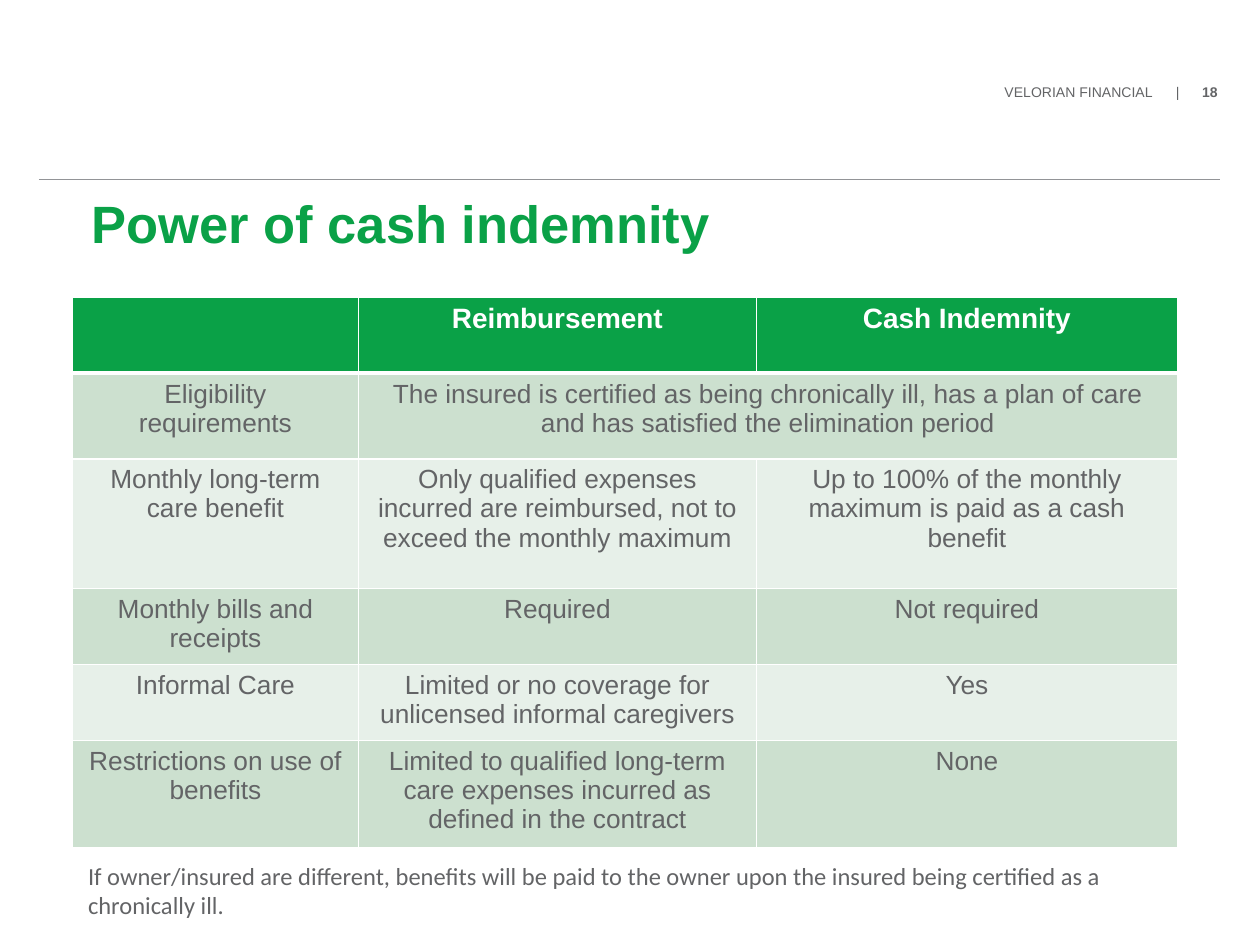
"""Build the slide comparing reimbursement with cash indemnity."""
import pptx
import pptx.dml.color
import pptx.enum.shapes
import pptx.enum.text
import pptx.oxml
import pptx.oxml.ns
import pptx.util
from lxml import etree

Pt = pptx.util.Pt
GREEN, GRAY, WHITE = "0AA147", "636466", "FFFFFF"
BANDS = ["CCE0CF", "E7F0E9"]
NS = pptx.oxml.ns.nsdecls("a")


def color(value):
    return pptx.dml.color.RGBColor.from_string(value)


def add_run(p, text, size, value, bold=False, name="Arial"):
    r = p.add_run()
    r.text = text
    r.font.name = name
    r.font.size = Pt(size)
    r.font.bold = bold
    r.font.color.rgb = color(value)


prs = pptx.Presentation()
prs.slide_width, prs.slide_height = Pt(720), Pt(540)
s = prs.slides.add_slide(prs.slide_layouts[6])

rule = s.shapes.add_connector(
    pptx.enum.shapes.MSO_CONNECTOR.STRAIGHT, Pt(22.3), Pt(102.3), Pt(697), Pt(102.3))
rule.line.color.rgb = color("929497")
rule.line.width = Pt(0.5)
etree.SubElement(rule._element.spPr, pptx.oxml.ns.qn("a:effectLst"))

sp = s.shapes.add_textbox(Pt(574), Pt(46), Pt(125.5), Pt(11))
tf = sp.text_frame
tf.word_wrap = True
tf.margin_left = tf.margin_right = tf.margin_bottom = 0
tf.margin_top = Pt(1.7)
p = tf.paragraphs[0]
p._p.get_or_add_pPr().append(pptx.oxml.parse_xml(
    f'<a:tabLst {NS}><a:tab pos="{Pt(98)}" algn="l"/>'
    f'<a:tab pos="{Pt(113)}" algn="l"/></a:tabLst>'))
add_run(p, "VELORIAN FINANCIAL\t|\t", 8, GRAY)
add_run(p, "18", 8, GRAY, True)

sp = s.shapes.add_textbox(Pt(45.4), Pt(110.9), Pt(471), Pt(75))
tf = sp.text_frame
tf.word_wrap = True
p = tf.paragraphs[0]
p.line_spacing = Pt(31)
add_run(p, "Power of cash indemnity", 30, GREEN, True)

rows = [
    ["", "Reimbursement", "Cash Indemnity"],
    ["Eligibility requirements",
     "The insured is certified as being chronically ill, has a plan of care "
     "and has satisfied the elimination period", ""],
    ["Monthly long-term care benefit",
     "Only qualified expenses incurred are reimbursed, not to exceed the monthly maximum",
     "Up to 100% of the monthly maximum is paid as a cash benefit"],
    ["Monthly bills and receipts", "Required", "Not required"],
    ["Informal Care", "Limited or no coverage for unlicensed informal caregivers", "Yes"],
    ["Restrictions on use of benefits",
     "Limited to qualified long-term care expenses incurred as defined in the contract",
     "None"],
]
widths = [163.4, 227.5, 240.5]
heights = [43.2, 49, 74.2, 43.4, 43.4, 57]
table = s.shapes.add_table(
    len(rows), len(widths), Pt(41.4), Pt(170), Pt(sum(widths)), Pt(sum(heights))).table
for column, width in zip(table.columns, widths):
    column.width = Pt(width)
for row, height in zip(table.rows, heights):
    row.height = Pt(height)

for i, texts in enumerate(rows):
    header = i == 0
    for j, text in enumerate(texts):
        cell = table.cell(i, j)
        tcPr = cell._tc.get_or_add_tcPr()
        for side in "LRTB":
            thick = (header and side == "B") or (i == 1 and side == "T")
            tcPr.append(pptx.oxml.parse_xml(
                f'<a:ln{side} {NS} w="{Pt(3 if thick else 1)}"><a:solidFill>'
                f'<a:srgbClr val="{WHITE}"/></a:solidFill></a:ln{side}>'))
        cell.fill.solid()
        cell.fill.fore_color.rgb = color(GREEN if header else BANDS[(i - 1) % 2])
        if text:
            p = cell.text_frame.paragraphs[0]
            p.alignment = pptx.enum.text.PP_ALIGN.CENTER
            add_run(p, text, 16 if header else 15, WHITE if header else GRAY, header)
table.cell(1, 1).merge(table.cell(1, 2))

sp = s.shapes.add_textbox(Pt(43.2), Pt(488.2), Pt(627), Pt(41))
tf = sp.text_frame
tf.word_wrap = True
add_run(tf.paragraphs[0],
        "If owner/insured are different, benefits will be paid to the owner upon "
        "the insured being certified as a chronically ill.", 14, GRAY, name="Calibri")

prs.save("out.pptx")
